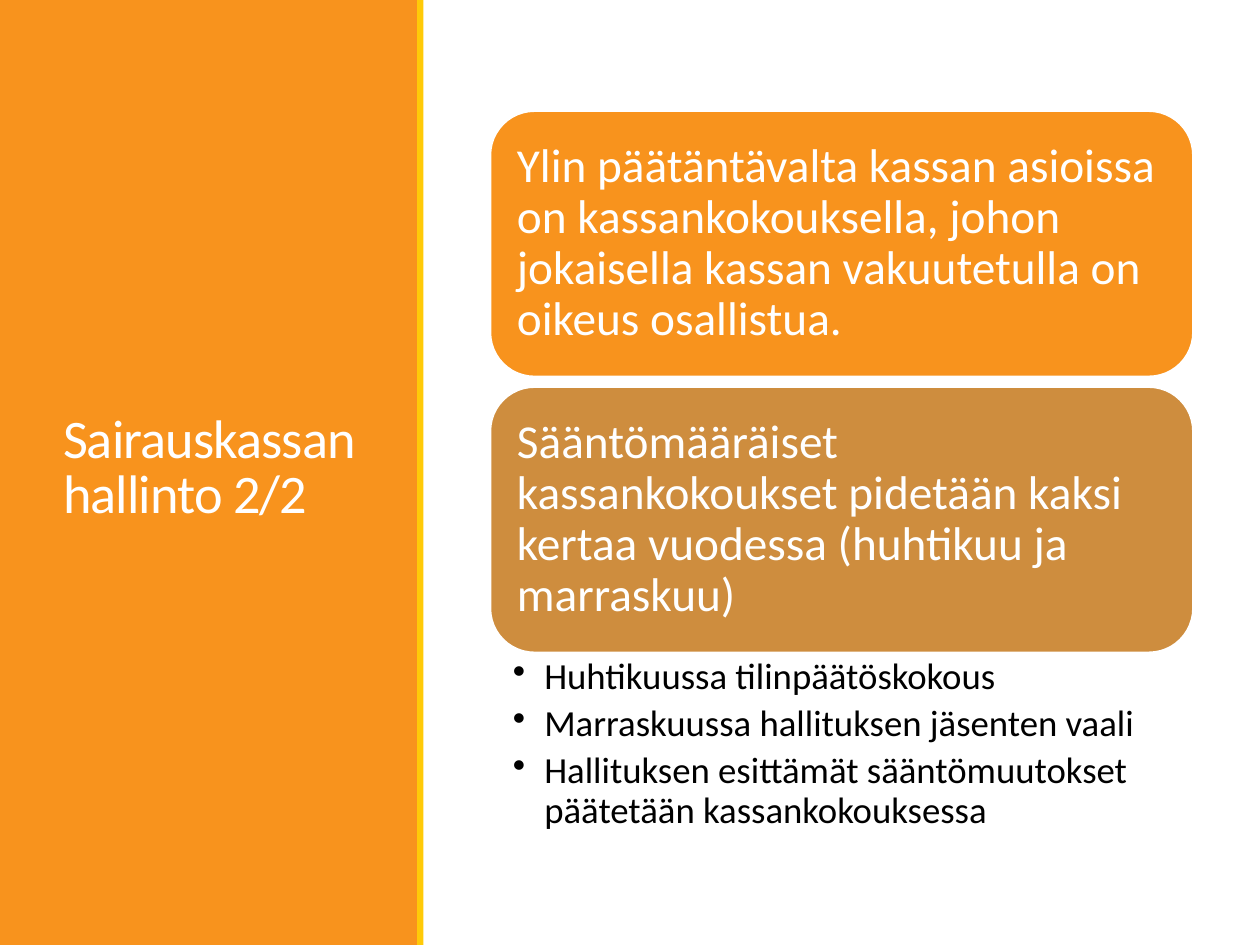
from lxml import etree
from pptx import Presentation
from pptx.dml.color import RGBColor
from pptx.enum.shapes import MSO_SHAPE
from pptx.enum.text import MSO_ANCHOR, MSO_AUTO_SIZE, PP_ALIGN
from pptx.oxml.ns import qn
from pptx.util import Inches, Pt

RECTANGLE, ROUNDED = MSO_SHAPE.RECTANGLE, MSO_SHAPE.ROUNDED_RECTANGLE
MIDDLE, TOP = MSO_ANCHOR.MIDDLE, MSO_ANCHOR.TOP
LEFT = PP_ALIGN.LEFT
NO_AUTOFIT = MSO_AUTO_SIZE.NONE

ORANGE = RGBColor(0xF8, 0x93, 0x1D)
YELLOW = RGBColor(0xFF, 0xCA, 0x08)
BRONZE = RGBColor(0xCE, 0x8D, 0x3E)
WHITE = RGBColor(0xFF, 0xFF, 0xFF)
BLACK = RGBColor(0, 0, 0)
FONT = "Calibri"

TITLE = "Sairauskassan hallinto 2/2"
CARDS = [
    ("Ylin päätäntävalta kassan asioissa on kassankokouksella, johon jokaisella "
     "kassan vakuutetulla on oikeus osallistua.", ORANGE),
    ("Sääntömääräiset kassankokoukset pidetään kaksi kertaa vuodessa "
     "(huhtikuu ja marraskuu)", BRONZE),
]
BULLETS = [
    "Huhtikuussa tilinpäätöskokous",
    "Marraskuussa hallituksen jäsenten vaali",
    "Hallituksen esittämät sääntömuutokset päätetään kassankokouksessa",
]
PANELS = [(0, 3.32, ORANGE), (3.31, 0.05, YELLOW)]

SLIDE_WIDTH, SLIDE_HEIGHT = 10, 7.5
CARD_LEFT, CARD_TOP, CARD_WIDTH, CARD_HEIGHT, CARD_GAP = 3.89, 0.88, 5.58, 2.11, 0.08


def add_filled(slide, kind, box, color):
    """Add a shadowless shape with a solid fill and no outline."""
    shape = slide.shapes.add_shape(kind, *map(Inches, box))
    shape.shadow.inherit = False
    shape.fill.solid()
    shape.fill.fore_color.rgb = color
    shape.line.fill.background()
    return shape


def write(shape, texts, size, color, anchor, spacing, insets=(0.1, 0.05, 0.1, 0.05)):
    """Fill a shape with left-aligned paragraphs and return them."""
    frame = shape.text_frame
    frame.text = "\n".join(texts)
    frame.word_wrap = True
    frame.auto_size = NO_AUTOFIT
    frame.vertical_anchor = anchor
    (frame.margin_left, frame.margin_top,
     frame.margin_right, frame.margin_bottom) = map(Inches, insets)
    for paragraph in frame.paragraphs:
        paragraph.alignment = LEFT
        paragraph.line_spacing = spacing
        paragraph.font.name = FONT
        paragraph.font.size = Pt(size)
        paragraph.font.color.rgb = color
    return frame.paragraphs


def add_bullet(paragraph):
    """Give a paragraph a hanging bullet."""
    properties = paragraph._p.get_or_add_pPr()
    properties.set("marL", str(Inches(0.25)))
    properties.set("indent", str(-Inches(0.25)))
    paragraph.space_after = Pt(4.2)
    bullet = etree.Element(qn("a:buChar"), char="•")
    properties.find(qn("a:spcAft")).addnext(bullet)


def build_title(slide):
    """Place the title over the coloured side panel."""
    title = slide.shapes.title
    title.left, title.top, title.width, title.height = map(Inches, (0.4, 0.57, 2.53, 6.31))
    paragraph = write(title, [TITLE], 31, WHITE, MIDDLE, 0.85)[0]
    paragraph.runs[0]._r.get_or_add_rPr().set("spc", "-50")
    for left, width, color in PANELS:
        panel = add_filled(slide, RECTANGLE, (left, 0, width, SLIDE_HEIGHT), color)
        title.element.addprevious(panel.element)


def build_content(slide):
    """Stack the cards and put the bullet list below them."""
    top = CARD_TOP
    for text, color in CARDS:
        card = add_filled(slide, ROUNDED, (CARD_LEFT, top, CARD_WIDTH, CARD_HEIGHT), color)
        card.line.color.rgb = WHITE
        card.line.width = Pt(1.25)
        write(card, [text], 27, WHITE, MIDDLE, 0.9, (0.11,) * 4)
        top += CARD_HEIGHT + CARD_GAP
    box = (CARD_LEFT, top - CARD_GAP, CARD_WIDTH, 1.53)
    details = slide.shapes.add_textbox(*map(Inches, box))
    for paragraph in write(details, BULLETS, 21, BLACK, TOP, 0.9, (0.18, 0.04, 0.21, 0.04)):
        add_bullet(paragraph)


def main():
    """Build and save the slide."""
    presentation = Presentation()
    presentation.slide_width = Inches(SLIDE_WIDTH)
    presentation.slide_height = Inches(SLIDE_HEIGHT)
    slide = presentation.slides.add_slide(presentation.slide_layouts[5])
    build_title(slide)
    build_content(slide)
    presentation.save("out.pptx")


if __name__ == "__main__":
    main()
